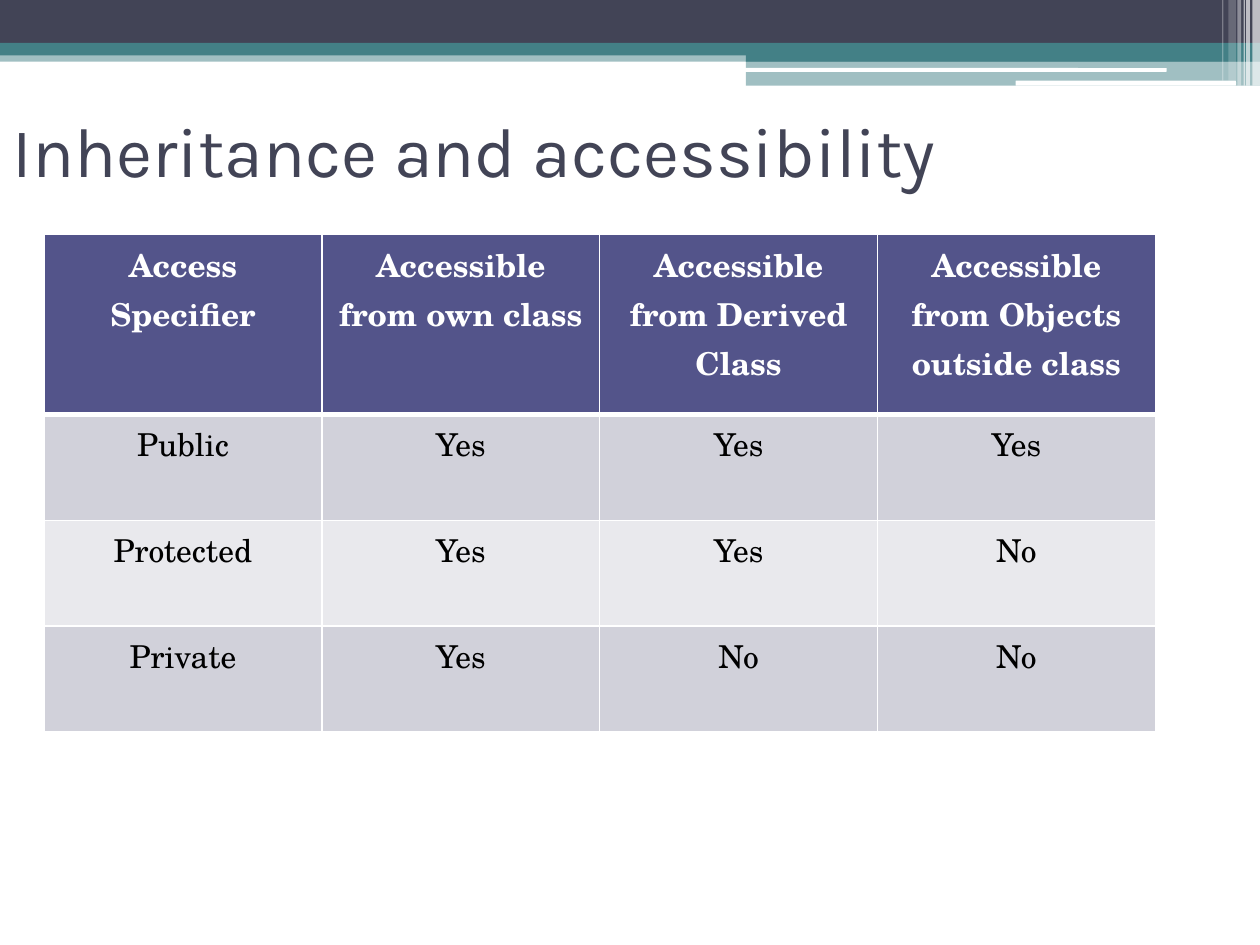
import pptx
import pptx.util
import pptx.dml.color
import pptx.enum.shapes
import pptx.enum.text
import pptx.oxml
import pptx.oxml.ns
from lxml import etree

WIDTH, HEIGHT = 10, 7.5
COLORS = {
    "slate": "424456", "teal": "438086", "white": "FFFFFF", "black": "000000",
    "header": "53548A", "odd": "D1D1DA", "even": "E9E9ED",
}
TITLE_FONT, TABLE_FONT = "Karla", "TeX Gyre Schola"
RECT = pptx.enum.shapes.MSO_SHAPE.RECTANGLE
ROUNDED = pptx.enum.shapes.MSO_SHAPE.ROUNDED_RECTANGLE

# Banner parts: preset, left, top, width, height, colour, opacity in percent
BANNER = [
    (RECT, 0, 0.4, WIDTH, 0.09, "teal", 50),
    (RECT, 0, 0, WIDTH, 0.34, "slate", 100),
    (RECT, 0, 0.34, WIDTH, 0.1, "teal", 100),
    (RECT, 5.92, 0.39, 4.08, 0.1, "teal", 100),
    (RECT, 5.92, 0.48, 4.08, 0.2, "teal", 50),
    (ROUNDED, 5.91, 0.54, 3.35, 0.03, "white", 100),
    (ROUNDED, 8.06, 0.64, 1.75, 0.04, "white", 100),
]
# Stripes at the right edge: left, width, height, opacity in percent
STRIPES = [
    (9.94, 0.06, 0.68, 65), (9.89, 0.03, 0.68, 65), (9.87, 0.01, 0.68, 60),
    (9.82, 0.03, 0.68, 40), (9.75, 0.06, 0.64, 20), (9.7, 0.01, 0.64, 30),
]
ACCESS_ROWS = [
    ("Access Specifier", "Accessible from own class",
     "Accessible from Derived Class", "Accessible from Objects outside class"),
    ("Public", "Yes", "Yes", "Yes"),
    ("Protected", "Yes", "Yes", "No"),
    ("Private", "Yes", "No", "No"),
]


def rgb(name):
    return pptx.dml.color.RGBColor.from_string(COLORS[name])


def inches(*lengths):
    return [pptx.util.Inches(length) for length in lengths]


def style_paragraph(paragraph, font_name, size, color, alignment, bold=False):
    paragraph.alignment = alignment
    font = paragraph.font
    font.name, font.size, font.bold = font_name, pptx.util.Pt(size), bold
    font.color.rgb = rgb(color)


def add_bar(slide, preset, left, top, width, height, color, opacity):
    bar = slide.shapes.add_shape(preset, *inches(left, top, width, height))
    bar.shadow.inherit = False
    bar.line.fill.background()
    bar.fill.solid()
    bar.fill.fore_color.rgb = rgb(color)
    if opacity < 100:
        tint = bar.fill._xPr.find(".//" + pptx.oxml.ns.qn("a:srgbClr"))
        etree.SubElement(tint, pptx.oxml.ns.qn("a:alpha"), val=str(opacity * 1000))


def add_title(slide, text):
    title = slide.shapes.title
    title.left, title.top, title.width, title.height = inches(0, 0.6, 9, 1.17)
    title.text_frame.text = text
    title.text_frame.vertical_anchor = pptx.enum.text.MSO_ANCHOR.MIDDLE
    style_paragraph(title.text_frame.paragraphs[0], TITLE_FONT, 40, "slate",
                    pptx.enum.text.PP_ALIGN.LEFT)


def add_borders(cell, **widths):
    for side in "LRTB":
        width = pptx.util.Pt(widths.get(side, 1))
        cell._tc.get_or_add_tcPr().append(pptx.oxml.parse_xml(
            f'<a:ln{side} {pptx.oxml.ns.nsdecls("a")} w="{width}"><a:solidFill>'
            f'<a:srgbClr val="{COLORS["white"]}"/></a:solidFill></a:ln{side}>'))


def add_access_table(slide):
    column_width, header_height, row_height = 2.205, 1.43, 0.84
    row_count, column_count = len(ACCESS_ROWS), len(ACCESS_ROWS[0])
    table = slide.shapes.add_table(row_count, column_count, *inches(
        0.35, 1.86, column_count * column_width,
        header_height + (row_count - 1) * row_height)).table
    for column in table.columns:
        column.width = pptx.util.Inches(column_width)
    for i, labels in enumerate(ACCESS_ROWS):
        is_header = i == 0
        table.rows[i].height = pptx.util.Inches(header_height if is_header else row_height)
        band = "header" if is_header else ("odd" if i % 2 else "even")
        # A thicker rule separates the header from the body
        rules = {0: {"B": 3}, 1: {"T": 3}}.get(i, {})
        for j, label in enumerate(labels):
            cell = table.cell(i, j)
            cell.text = label
            style_paragraph(cell.text_frame.paragraphs[0], TABLE_FONT, 18,
                            "white" if is_header else "black",
                            pptx.enum.text.PP_ALIGN.CENTER, is_header)
            add_borders(cell, **rules)
            cell.fill.solid()
            cell.fill.fore_color.rgb = rgb(band)


def main():
    deck = pptx.Presentation()
    deck.slide_width, deck.slide_height = inches(WIDTH, HEIGHT)
    slide = deck.slides.add_slide(deck.slide_layouts.get_by_name("Title Only"))
    # Banner
    for part in BANNER:
        add_bar(slide, *part)
    for left, width, height, opacity in STRIPES:
        add_bar(slide, RECT, left, 0, width, height, "white", opacity)
    # Content
    add_title(slide, "Inheritance and accessibility")
    add_access_table(slide)
    deck.save("out.pptx")


if __name__ == "__main__":
    main()
